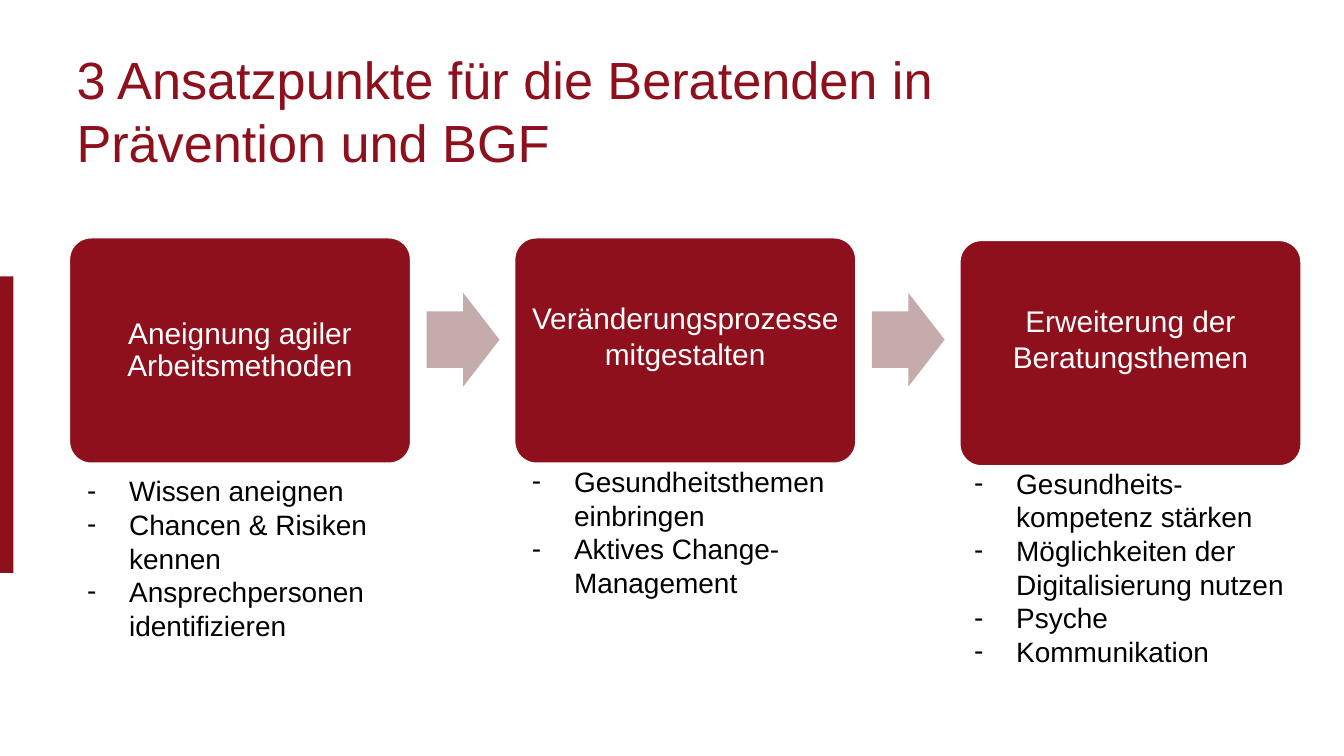
from dataclasses import dataclass

from lxml import etree
from pptx import Presentation
from pptx.dml.color import RGBColor
from pptx.enum.shapes import MSO_SHAPE
from pptx.enum.text import MSO_ANCHOR, PP_ALIGN
from pptx.oxml.ns import qn
from pptx.util import Pt

RECTANGLE = MSO_SHAPE.RECTANGLE
ROUNDED_RECTANGLE = MSO_SHAPE.ROUNDED_RECTANGLE
RIGHT_ARROW = MSO_SHAPE.RIGHT_ARROW
MIDDLE = MSO_ANCHOR.MIDDLE
TOP = MSO_ANCHOR.TOP
LEFT = PP_ALIGN.LEFT
CENTER = PP_ALIGN.CENTER


@dataclass(frozen=True)
class Theme:
    font: str = "Arial"
    red: RGBColor = RGBColor(0x8E, 0x10, 0x1C)
    rose: RGBColor = RGBColor(0xC6, 0xAB, 0xAC)
    white: RGBColor = RGBColor(0xFF, 0xFF, 0xFF)
    black: RGBColor = RGBColor(0x00, 0x00, 0x00)
    title_size: int = 28
    step_size: int = 16
    list_size: int = 15


class SlideBuilder:
    def __init__(self, slide, theme):
        self.slide = slide
        self.theme = theme

    def style(self, paragraph, size, color, alignment):
        paragraph.alignment = alignment
        for run in paragraph.runs:
            run.font.name = self.theme.font
            run.font.size = Pt(size)
            run.font.color.rgb = color

    def title(self, text, left, top, width, height):
        shape = self.slide.shapes.title
        shape.left, shape.top = Pt(left), Pt(top)
        shape.width, shape.height = Pt(width), Pt(height)
        text_frame = shape.text_frame
        text_frame.text = text
        text_frame.word_wrap = True
        text_frame.vertical_anchor = TOP
        text_frame.margin_top = 0
        self.style(text_frame.paragraphs[0], self.theme.title_size, self.theme.red, LEFT)

    def block(self, kind, left, top, width, height, color):
        shape = self.slide.shapes.add_shape(kind, Pt(left), Pt(top), Pt(width), Pt(height))
        shape.shadow.inherit = False
        shape.fill.solid()
        shape.fill.fore_color.rgb = color
        shape.line.fill.background()
        return shape

    def step(self, text, left, top, width, height, line_spacing, bottom_inset):
        shape = self.block(ROUNDED_RECTANGLE, left, top, width, height, self.theme.red)
        shape.adjustments[0] = 0.1
        shape.line.color.rgb = self.theme.white
        shape.line.width = Pt(2)
        text_frame = shape.text_frame
        text_frame.word_wrap = True
        text_frame.vertical_anchor = MIDDLE
        text_frame.margin_left = text_frame.margin_right = Pt(3)
        text_frame.margin_top = Pt(7)
        text_frame.margin_bottom = Pt(bottom_inset)
        text_frame.text = text
        paragraph = text_frame.paragraphs[0]
        paragraph.line_spacing = line_spacing
        self.style(paragraph, self.theme.step_size, self.theme.white, CENTER)

    def arrow(self, left, top, width, height):
        shape = self.block(RIGHT_ARROW, left, top, width, height, self.theme.rose)
        shape.adjustments[0] = 0.6
        shape.adjustments[1] = 0.5

    def dash_list(self, items, left, top, width, height):
        shape = self.slide.shapes.add_textbox(Pt(left), Pt(top), Pt(width), Pt(height))
        text_frame = shape.text_frame
        text_frame.word_wrap = True
        text_frame.vertical_anchor = TOP
        text_frame.text = "\n".join(items)
        for paragraph in text_frame.paragraphs:
            properties = paragraph._p.get_or_add_pPr()
            properties.set("marL", str(Pt(22.5)))
            properties.set("indent", str(-Pt(22.5)))
            etree.SubElement(properties, qn("a:buFont")).set("typeface", self.theme.font)
            etree.SubElement(properties, qn("a:buChar")).set("char", "-")
            self.style(paragraph, self.theme.list_size, self.theme.black, LEFT)


def main():
    presentation = Presentation()
    presentation.slide_width, presentation.slide_height = Pt(720), Pt(405)
    slide = presentation.slides.add_slide(presentation.slide_layouts[5])
    builder = SlideBuilder(slide, Theme())

    builder.block(RECTANGLE, -7.2, 148, 14.4, 159, builder.theme.red)
    builder.title("3 Ansatzpunkte für die Beratenden in Prävention und BGF", 33.8, 25.2, 481, 82)

    first_left, pitch, step_width, step_height = 36.6, 238.5, 184, 122
    steps = [
        ("Aneignung agiler Arbeitsmethoden", 126.8, 0.9, 7, 39.6, 250.3, 120,
         ["Wissen aneignen", "Chancen & Risiken kennen", "Ansprechpersonen identifizieren"]),
        ("Veränderungsprozesse mitgestalten", 126.8, 1, 23, 277.9, 245.3, 99,
         ["Gesundheitsthemen einbringen", "Aktives Change-Management"]),
        ("Erweiterung der Beratungsthemen", 128.2, 1, 23, 514.8, 246.3, 117,
         ["Gesundheits-kompetenz stärken", "Möglichkeiten der Digitalisierung nutzen",
          "Psyche", "Kommunikation"]),
    ]
    for index, (text, top, spacing, inset, list_left, list_top, list_height, items) in enumerate(steps):
        left = first_left + index * pitch
        if index:
            builder.arrow(left - 46.5, 156.8, 39, 50.4)
        builder.step(text, left, top, step_width, step_height, spacing, inset)
        builder.dash_list(items, list_left, list_top, 181, list_height)

    presentation.save("out.pptx")


if __name__ == "__main__":
    main()
